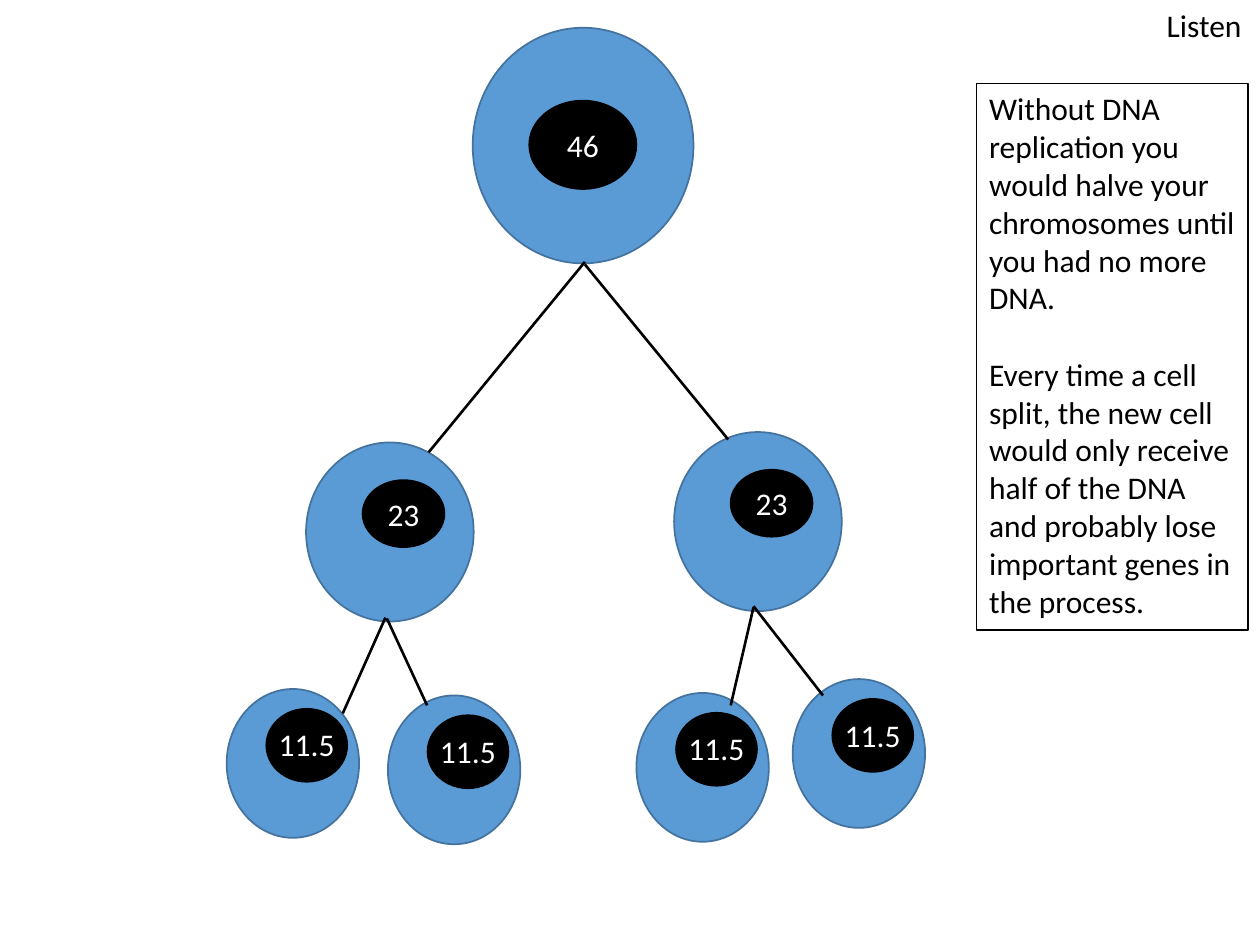
import pptx
import pptx.dml.color
import pptx.enum.shapes
import pptx.enum.text
import pptx.oxml.ns
import pptx.util
from lxml import etree

Cm = pptx.util.Cm
Pt = pptx.util.Pt
SHAPES = pptx.enum.shapes.MSO_SHAPE
ANCHOR = pptx.enum.text.MSO_ANCHOR
ALIGN = pptx.enum.text.PP_ALIGN
AUTO = pptx.enum.text.MSO_AUTO_SIZE

COLOURS = {"cell": "5B9BD5", "rim": "43739E", "black": "000000", "white": "FFFFFF"}
FONT = {"name": "Calibri", "size": Pt(18)}
CENTRED = {"vertical_anchor": ANCHOR.MIDDLE, "word_wrap": True}
GROWING = {"vertical_anchor": ANCHOR.TOP, "word_wrap": True,
           "auto_size": AUTO.SHAPE_TO_FIT_TEXT}

CELL_TYPES = {
    "parent": {"size": (4.45, 4.75), "nucleus": (1.14, 1.47, 2.16, 1.78), "count": "46"},
    "daughter": {"size": (3.38, 3.61), "nucleus": (1.14, 0.76, 1.65, 1.35), "count": "23"},
    "granddaughter": {"size": (2.67, 3), "nucleus": (0.8, 0.4, 1.63, 1.47),
                      "label": (0.8, 0.61, 1.96, 1.07), "count": "11.5"},
}
CELLS = [
    ("parent", 9.53, 0.56),
    ("daughter", 6.17, 8.92),
    ("daughter", 13.59, 8.71),
    ("granddaughter", 4.57, 13.89),
    ("granddaughter", 7.82, 14.02),
    ("granddaughter", 12.83, 13.97),
    ("granddaughter", 15.98, 13.69),
]
BRANCHES = [
    (11.79, 5.28, 8.64, 9.12),
    (11.79, 5.33, 14.68, 8.86),
    (7.77, 12.45, 6.91, 14.38),
    (7.8, 12.47, 8.61, 14.22),
    (15.19, 12.24, 14.73, 14.22),
    (15.19, 12.22, 16.59, 14.02),
]
EXPLANATION = [
    "Without DNA replication you would halve your chromosomes until you had no more DNA.",
    "Every time a cell split, the new cell would only receive half of the DNA and probably "
    "lose important genes in the process.",
]


def apply(target, values):
    for name, value in values.items():
        setattr(target, name, value)


def rgb(colour):
    return pptx.dml.color.RGBColor.from_string(COLOURS[colour])


def write(shape, texts, colour, frame_format, align=ALIGN.LEFT, gap=0):
    frame = shape.text_frame
    apply(frame, frame_format)
    for index, text in enumerate(texts):
        para = frame.add_paragraph() if index else frame.paragraphs[0]
        apply(para, {"alignment": align, "space_before": Pt(gap if index else 0)})
        span = para.add_run()
        span.text = text
        apply(span.font, FONT)
        span.font.color.rgb = rgb(colour)


def draw_shape(shapes, kind, box, fill, line, width):
    shape = shapes.add_shape(kind, *map(Cm, box))
    shape.shadow.inherit = False
    shape.fill.solid()
    shape.fill.fore_color.rgb = rgb(fill)
    shape.line.color.rgb = rgb(line)
    shape.line.width = Pt(width)
    return shape


def draw_cell(page, kind, left, top):
    parts = CELL_TYPES[kind]
    shapes = page.shapes.add_group_shape().shapes

    def inside(box):
        return (left + box[0], top + box[1], *box[2:])

    draw_shape(shapes, SHAPES.OVAL, (left, top, *parts["size"]), "cell", "rim", 1)
    nucleus = draw_shape(shapes, SHAPES.OVAL, inside(parts["nucleus"]), "black", "black", 1)
    if "label" in parts:
        label = shapes.add_textbox(*map(Cm, inside(parts["label"])))
        write(label, [parts["count"]], "white", GROWING)
    else:
        write(nucleus, [parts["count"]], "white", CENTRED, ALIGN.CENTER)


def draw_branch(page, ends):
    branch = page.shapes.add_connector(pptx.enum.shapes.MSO_CONNECTOR.STRAIGHT, *map(Cm, ends))
    branch.line.color.rgb = rgb("black")
    branch.line.width = Pt(1.5)
    etree.SubElement(branch._element.spPr, pptx.oxml.ns.qn("a:effectLst"))


def draw_heading(page, box):
    heading = page.shapes.add_textbox(*map(Cm, box))
    write(heading, ["Listen"], "black", GROWING)


def draw_explanation(page, box):
    panel = draw_shape(page.shapes, SHAPES.RECTANGLE, box, "white", "black", 0.75)
    write(panel, EXPLANATION, "black", GROWING, gap=22)


def main():
    deck = pptx.Presentation()
    apply(deck, {"slide_width": Cm(25.4), "slide_height": Cm(19.05)})
    page = deck.slides.add_slide(deck.slide_layouts[6])
    for cell in CELLS:
        draw_cell(page, *cell)
    for ends in BRANCHES:
        draw_branch(page, ends)
    draw_heading(page, (23.27, 0, 2.41, 1.02))
    draw_explanation(page, (19.69, 1.68, 5.47, 11.02))
    deck.save("out.pptx")


if __name__ == "__main__":
    main()
